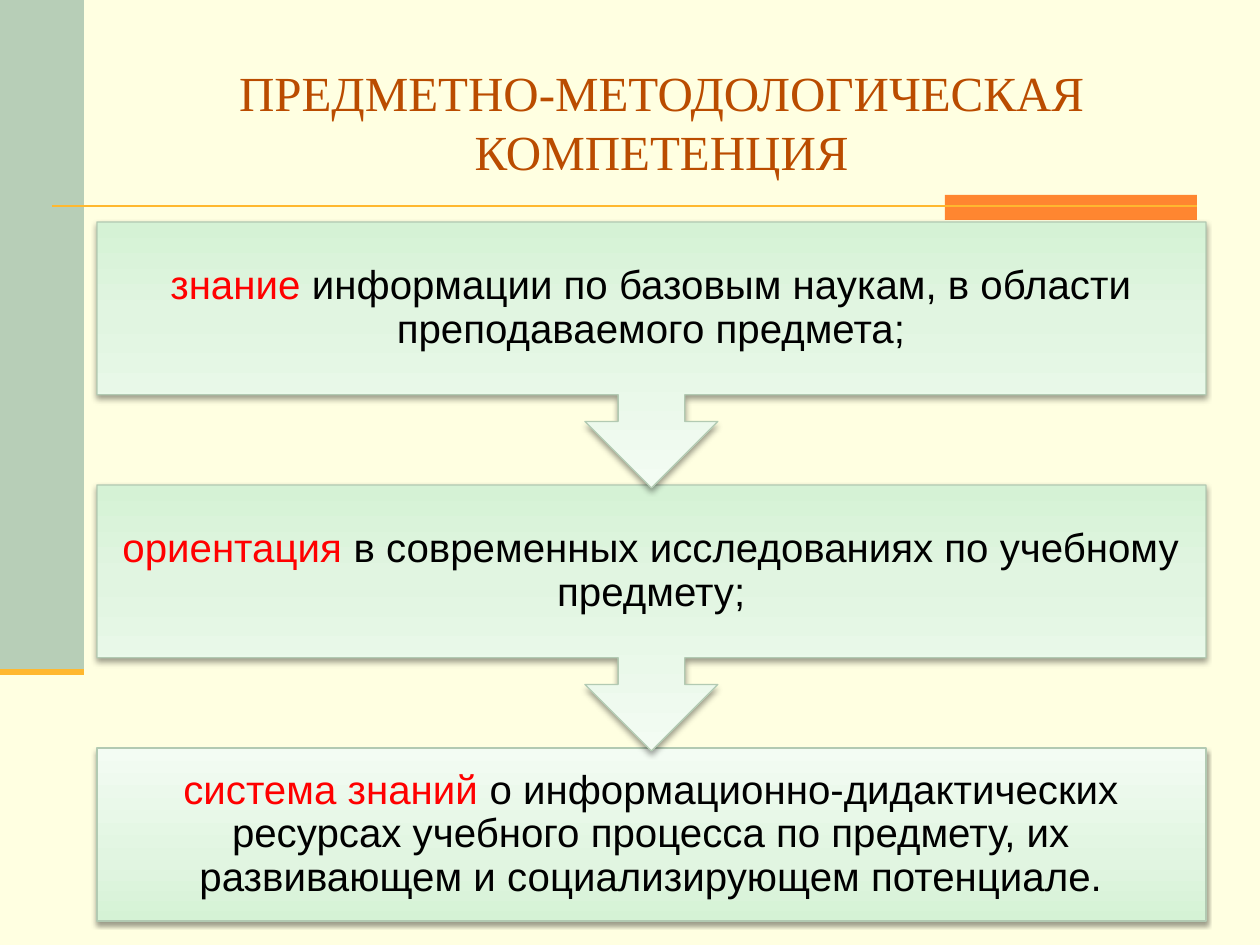
from pptx import Presentation
from pptx.dml.color import RGBColor
from pptx.enum.shapes import MSO_CONNECTOR, MSO_SHAPE
from pptx.enum.text import MSO_ANCHOR, PP_ALIGN
from pptx.oxml import parse_xml
from pptx.oxml.ns import nsdecls
from pptx.util import Pt

RECT = MSO_SHAPE.RECTANGLE
CALL = MSO_SHAPE.DOWN_ARROW_CALLOUT
LINE = MSO_CONNECTOR.STRAIGHT
MID = MSO_ANCHOR.MIDDLE
MIDDLE = PP_ALIGN.CENTER

HUES = {
    "back": "FFFFE1", "side": "B7CEB7", "tab": "FF8630", "rule": "FFB82F",
    "title": "BA4C00", "key": "FF0000", "text": "000000", "edge": "B2CAB2",
}
SHADES = [(0, "D5F2D5"), (35, "E1F5E1"), (100, "F3FCF3")]
TITLE = "ПРЕДМЕТНО-МЕТОДОЛОГИЧЕСКАЯ КОМПЕТЕНЦИЯ"
STEPS = [
    ("знание", " информации по базовым наукам, в области преподаваемого предмета;"),
    ("ориентация", " в современных исследованиях по учебному предмету;"),
    ("система знаний", " о информационно-дидактических ресурсах учебного процесса "
     "по предмету, их развивающем и социализирующем потенциале."),
]
BARS = [((0, 0, 84, 672), "side"), ((945, 195, 252, 25), "tab")]
RULES = [((52, 206, 1197, 206), 1.5), ((0, 672, 84, 672), 3.5)]
LEFT, TOP, WIDE, PITCH = 97, 222, 1109, 263
BODY, FULL, INSET = 173, 266, 23


def px(n):
    return round(n * 914400 / 126)


def hue(name):
    return RGBColor.from_string(HUES[name])


def add_rule(ends, width):
    rule = slide.shapes.add_connector(LINE, *map(px, ends))
    rule.line.color.rgb = hue("rule")
    rule.line.width = Pt(width)
    rule._element.spPr.append(parse_xml(f"<a:effectLst {nsdecls('a')}/>"))


def add_bar(box, name):
    bar = slide.shapes.add_shape(RECT, *map(px, box))
    bar.shadow.inherit = False
    bar.fill.solid()
    bar.fill.fore_color.rgb = hue(name)
    bar.line.fill.background()


def shade(shape, angle):
    stops = "".join(
        f'<a:gs pos="{pos * 1000}"><a:srgbClr val="{tone}"/></a:gs>'
        for pos, tone in SHADES)
    props = shape._element.spPr
    props.insert(2, parse_xml(
        f'<a:gradFill {nsdecls("a")} rotWithShape="1"><a:gsLst>{stops}</a:gsLst>'
        f'<a:lin ang="{angle * 60000}" scaled="0"/></a:gradFill>'))
    shape.line.color.rgb = hue("edge")
    shape.line.width = Pt(0.75)
    props.append(parse_xml(
        f'<a:effectLst {nsdecls("a")}><a:outerShdw blurRad="{Pt(3.1)}" '
        f'dist="{Pt(1.6)}" dir="5400000" rotWithShape="0">'
        '<a:srgbClr val="000000"><a:alpha val="38000"/></a:srgbClr>'
        '</a:outerShdw></a:effectLst>'))


def add_step(index, parts):
    last = index == len(STEPS) - 1
    box = (LEFT, TOP + index * PITCH, WIDE, BODY if last else FULL)
    step = slide.shapes.add_shape(RECT if last else CALL, *map(px, box))
    shade(step, 270 if last else 90)
    frame = step.text_frame
    frame.word_wrap = True
    frame.vertical_anchor = MID
    frame.margin_left = frame.margin_right = px(INSET)
    frame.margin_top = frame.margin_bottom = px(INSET)
    para = frame.paragraphs[0]
    para.alignment = MIDDLE
    para.line_spacing = 0.9
    para.font.name = "Arial"
    para.font.size = Pt(23)
    for text, name in zip(parts, ("key", "text")):
        run = para.add_run()
        run.text = text
        run.font.color.rgb = hue(name)


def add_title():
    frame = slide.shapes.add_textbox(*map(px, (126, 42, 1071, 158))).text_frame
    frame.word_wrap = True
    frame.vertical_anchor = MID
    para = frame.paragraphs[0]
    para.text = TITLE
    para.alignment = MIDDLE
    para.font.name = "Times New Roman"
    para.font.size = Pt(28)
    para.font.color.rgb = hue("title")


deck = Presentation()
deck.slide_width, deck.slide_height = px(1260), px(945)
slide = deck.slides.add_slide(deck.slide_layouts[6])
slide.background.fill.solid()
slide.background.fill.fore_color.rgb = hue("back")
for box, name in BARS:
    add_bar(box, name)
for ends, width in RULES:
    add_rule(ends, width)
add_title()
for index, parts in reversed(list(enumerate(STEPS))):
    add_step(index, parts)
deck.save("out.pptx")
